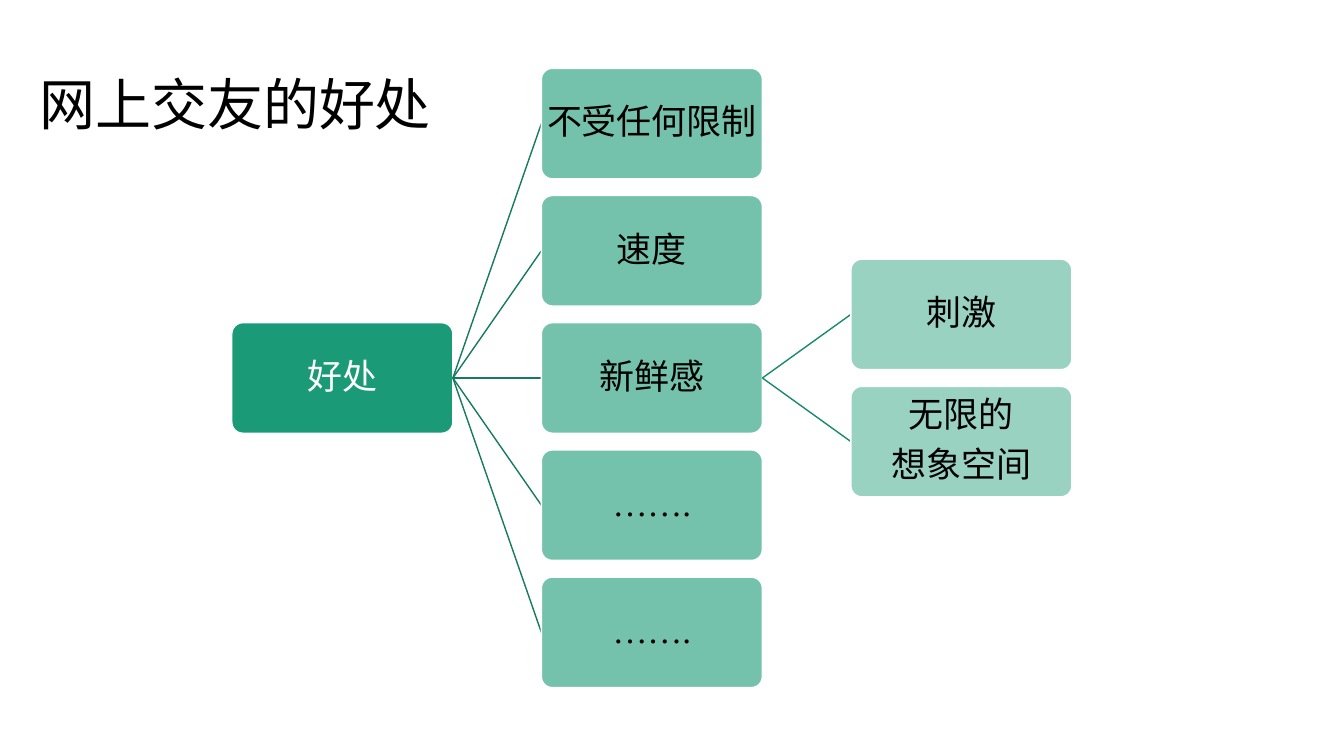
import pptx
import pptx.dml.color
import pptx.enum.shapes
import pptx.enum.text
import pptx.oxml.ns
import pptx.util
from lxml import etree

Pt = pptx.util.Pt
RGBColor = pptx.dml.color.RGBColor
qn = pptx.oxml.ns.qn

GREEN = RGBColor(0x1A, 0x9A, 0x76)
BRANCH_GREEN = RGBColor(0x16, 0x7A, 0x5F)
TWIG_GREEN = RGBColor(0x17, 0x8B, 0x6A)
WHITE = RGBColor(0xFF, 0xFF, 0xFF)
BLACK = RGBColor(0x00, 0x00, 0x00)

NODE_WIDTH, NODE_HEIGHT = 157.9, 78.95
COLUMN_STEP, ROW_STEP = 221.1, 90.85

BENEFITS = [["不受任何限制"], ["速度"], ["新鲜感"], ["……."], ["……."]]
NOVELTY = [["刺激"], ["无限的", "想象空间"]]


def add_title(slide, left, top, width, height):
    """Place the slide heading in the title placeholder."""
    heading = slide.shapes.title
    heading.left, heading.top = Pt(left), Pt(top)
    heading.width, heading.height = Pt(width), Pt(height)
    frame = heading.text_frame
    frame.vertical_anchor = pptx.enum.text.MSO_ANCHOR.MIDDLE
    paragraph = frame.paragraphs[0]
    paragraph.alignment = pptx.enum.text.PP_ALIGN.LEFT
    paragraph.line_spacing = 0.9
    run = paragraph.add_run()
    run.text = "网上交友的好处"
    run.font.size = Pt(40)
    run.font.name = "Noto Sans CJK SC"
    run.font.color.rgb = BLACK
    east_asian = etree.SubElement(run.font._element, qn("a:ea"))
    east_asian.set("typeface", "Noto Sans CJK SC")


def add_node(slide, left, middle, lines, opacity, text_color):
    """Add a rounded box centred vertically on middle."""
    node = slide.shapes.add_shape(
        pptx.enum.shapes.MSO_SHAPE.ROUNDED_RECTANGLE,
        Pt(left), Pt(middle - NODE_HEIGHT / 2), Pt(NODE_WIDTH), Pt(NODE_HEIGHT))
    node.adjustments[0] = 0.1
    node.shadow.inherit = False
    node.fill.solid()
    node.fill.fore_color.rgb = GREEN
    if opacity < 100:
        color = node.fill._xPr.find(qn("a:solidFill"))[0]
        etree.SubElement(color, qn("a:alpha")).set("val", str(opacity * 1000))
    node.line.color.rgb = WHITE
    node.line.width = Pt(1)
    frame = node.text_frame
    frame.word_wrap = True
    frame.vertical_anchor = pptx.enum.text.MSO_ANCHOR.MIDDLE
    frame.margin_left = frame.margin_right = Pt(1)
    frame.margin_top = frame.margin_bottom = Pt(1)
    for index, line in enumerate(lines):
        paragraph = frame.add_paragraph() if index else frame.paragraphs[0]
        paragraph.alignment = pptx.enum.text.PP_ALIGN.CENTER
        paragraph.line_spacing = 0.9
        paragraph.space_before = Pt(8.8 if index else 0)
        run = paragraph.add_run()
        run.text = line
        run.font.size = Pt(25)
        run.font.name = "Times New Roman"
        run.font.color.rgb = text_color


def add_children(slide, parent_left, parent_middle, children, opacity, line_color):
    """Add a column of boxes, each joined to the parent on its left."""
    child_left = parent_left + COLUMN_STEP
    first_middle = parent_middle - ROW_STEP * (len(children) - 1) / 2
    for index, lines in enumerate(children):
        middle = first_middle + ROW_STEP * index
        branch = slide.shapes.add_connector(
            pptx.enum.shapes.MSO_CONNECTOR.STRAIGHT,
            Pt(parent_left + NODE_WIDTH), Pt(parent_middle), Pt(child_left), Pt(middle))
        branch.line.color.rgb = line_color
        branch.line.width = Pt(1)
        etree.SubElement(branch._element.spPr, qn("a:effectLst"))
        add_node(slide, child_left, middle, lines, opacity, BLACK)


def add_benefit_tree(slide, left, middle):
    """Draw the three-level tree from its root at the left."""
    add_node(slide, left, middle, ["好处"], 100, WHITE)
    add_children(slide, left, middle, BENEFITS, 60, BRANCH_GREEN)
    add_children(slide, left + COLUMN_STEP, middle, NOVELTY, 44, TWIG_GREEN)


def main():
    """Build and save the slide."""
    deck = pptx.Presentation()
    deck.slide_width, deck.slide_height = Pt(960), Pt(540)
    slide = deck.slides.add_slide(deck.slide_layouts[5])
    add_benefit_tree(slide, 165.6, 270)
    add_title(slide, 20.9, 28, 939, 97)
    deck.save("out.pptx")


if __name__ == "__main__":
    main()
